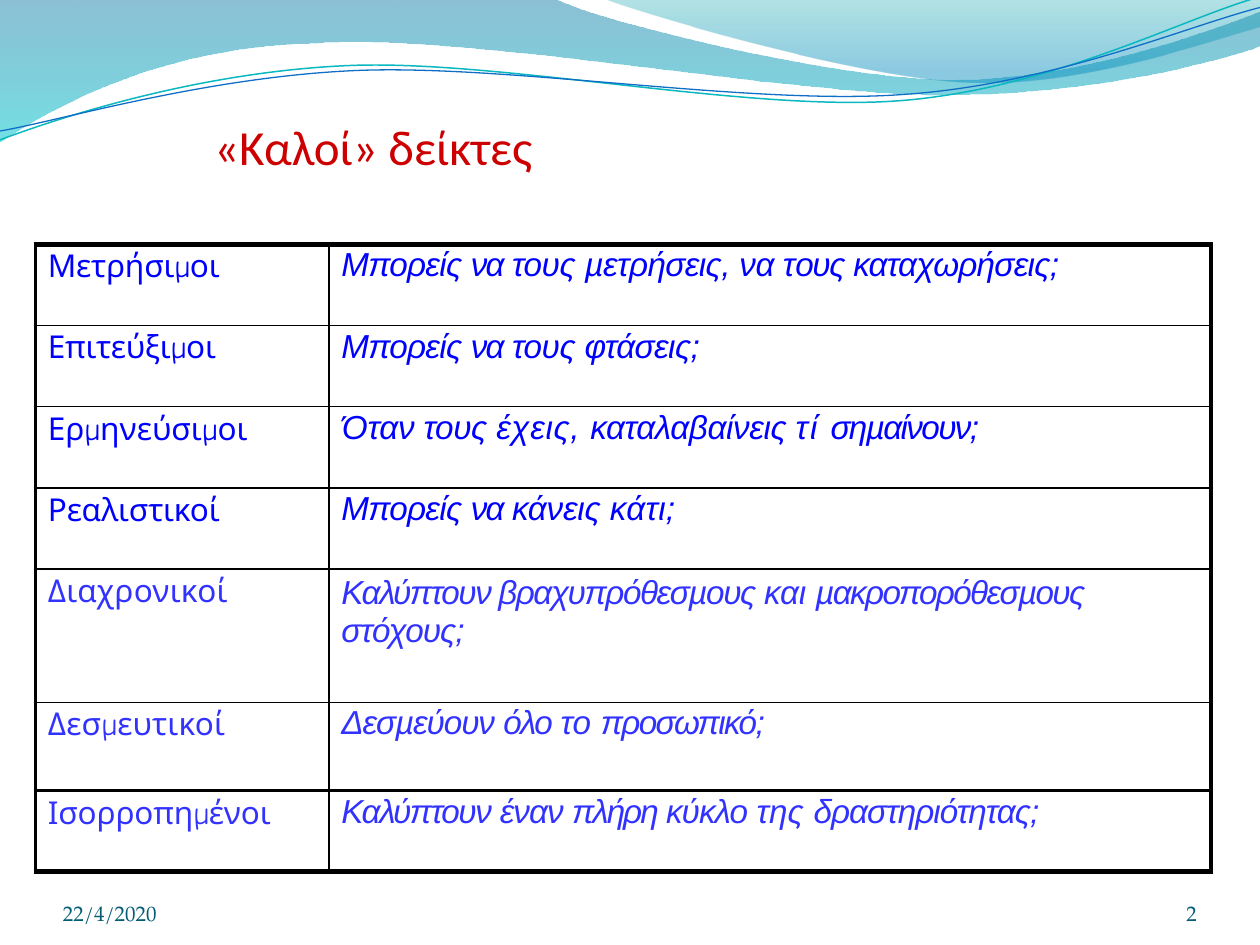
from math import cos, radians, sin

from lxml.etree import SubElement
from pptx import Presentation
from pptx.dml.color import RGBColor
from pptx.enum.text import MSO_ANCHOR as Anchor, MSO_AUTO_SIZE as AutoSize, PP_ALIGN as Align
from pptx.oxml.ns import qn
from pptx.util import Inches, Pt

BLACK = RGBColor(0x00, 0x00, 0x00)
RED = RGBColor(0xCC, 0x00, 0x00)
BLUE = RGBColor(0x00, 0x00, 0xFF)
SOFT_BLUE = RGBColor(0x32, 0x32, 0xFF)
FOOTER_TEAL = RGBColor(0x04, 0x5D, 0x75)
DEEP_BLUE = RGBColor(0x00, 0x74, 0xA1)
CYAN = RGBColor(0x00, 0xC6, 0xCF)
TEAL = RGBColor(0x00, 0xA1, 0xA9)
SKY = RGBColor(0x00, 0x8B, 0xBF)
LINE_TEAL = RGBColor(0x0A, 0xB8, 0xBF)
LINE_BLUE = RGBColor(0x0F, 0x6F, 0xC6)

LABEL_FONT, TEXT_FONT = "Comic Neue", "Arial"
COL_WIDTHS = [2.33, 7]
ROW = 3.22 / 5
ROW_HEIGHTS = [ROW, ROW, ROW, ROW, 1.06, 0.7, ROW]
COL_EDGES = [2.25, 1, 2.25]
ROW_EDGES = [3, 1, 1, 1, 1, 1, 1.5, 3]
STRAND_TILT = 2.7

INDICATORS = [
    (BLUE, ("Μετρήσιµοι", -0.1),
     [("Μπορείς ", -0.4), ("να ", -1), ("τους ", -0.2), ("µετρήσεις, ", -0.3),
      ("να τ", -0.2), ("ους ", -0.8), ("καταχωρήσεις;", -0.4)]),
    (BLUE, ("Επιτεύξιµοι", -0.1),
     [("Μπορείς ", -0.4), ("να ", -1), ("τους ", -0.2), ("φτάσεις;", -0.3)]),
    (BLUE, ("Ερµηνεύσιµοι", 0),
     [("Όταν ", -0.1), ("τους ", -0.2), ("έχεις, ", 0.4), ("καταλαβαίνεις ", -0.2),
      ("τί ", 1.1), ("σηµαίνουν;", -0.9)]),
    (BLUE, ("Ρεαλιστικοί", -0.1),
     [("Μπορείς ", -0.4), ("να ", -1), ("κάνεις ", -0.1), ("κάτι;", 0.2)]),
    (SOFT_BLUE, ("Διαχρονικοί", 0.1),
     [("Καλύπτουν βραχυπρόθεσµους ", -0.8), ("και ", -0.1),
      ("µακροπορόθεσµους ", -0.9), ("στόχους;", -0.5)]),
    (SOFT_BLUE, ("Δεσµευτικοί", 0.1),
     [("Δεσµεύουν ", -0.6), ("όλο ", -0.9), ("το ", 0.1), ("προσωπικό;", -0.9)]),
    (SOFT_BLUE, ("Ισορροπηµένοι", -0.1),
     [("Καλύπτουν ", -0.8), ("έναν ", -0.5), ("πλήρη ", -1.1), ("κύκλο ", -0.5),
      ("της ", 0.1), ("δραστηριότητας;", -0.5)]),
]

BROAD_WAVE = [
    [(0, 0)], [(4.4, -0.01)],
    [(4.76, 0.17), (6.64, 0.63), (7.58, 0.63)],
    [(8.53, 0.63), (9.58, 0.26), (10, 0.09)],
    [(10.01, 0.36)],
    [(9.83, 0.44), (8.7, 0.76), (7.46, 0.75)],
    [(6.22, 0.75), (3.82, 0.28), (2.57, 0.34)],
    [(1.29, 0.36), (0.46, 0.83), (-0.01, 1.13)],
    [(0, 0)],
]
RIGHT_WAVE = [
    [(4.79, -0.01)],
    [(5.09, 0.11), (6.82, 0.62), (7.69, 0.65)],
    [(8.56, 0.69), (9.61, 0.32), (10, 0.21)],
    [(10, 0)], [(4.79, -0.01)],
]
TEAL_STRAND = [
    [(0, 1.11)],
    [(0.48, 0.93), (1.58, 0.57), (2.77, 0.52)],
    [(3.95, 0.47), (5.93, 0.89), (7.13, 0.8)],
    [(8.33, 0.71), (9.38, 0.15), (9.98, -0.02)],
]
BLUE_STRAND = [
    [(0, 1.04)],
    [(0.47, 0.96), (1.64, 0.61), (2.83, 0.56)],
    [(4.03, 0.51), (5.97, 0.84), (7.17, 0.75)],
    [(8.36, 0.67), (9.41, 0.21), (10, 0.06)],
]


def add_outline(slide, segments, close):
    start, *points = [(Inches(x), Inches(y)) for segment in segments for x, y in segment]
    builder = slide.shapes.build_freeform(*start)
    builder.add_line_segments(points, close)
    s = builder.convert_to_shape()
    s.shadow.inherit = False
    lines = iter(list(s._element.iter(qn("a:lnTo"))))
    for segment in segments[1:]:
        first, *others = [next(lines) for _ in segment]
        if others:
            first.tag = qn("a:cubicBezTo")
            for line in others:
                first.append(line[0])
                line.getparent().remove(line)
    return s


def add_wave(slide, segments, stops):
    s = add_outline(slide, segments, True)
    s.fill.gradient()
    s.fill.gradient_angle = 270
    for stop, (position, color, _) in zip(s.fill.gradient_stops, stops):
        stop.position = position
        stop.color.rgb = color
    for clr, (_, _, alpha) in zip(s._element.spPr.iter(qn("a:srgbClr")), stops):
        SubElement(clr, qn("a:alpha")).set("val", str(alpha * 1000))
    s.line.fill.background()


def turn(point, center, degrees):
    dx, dy = point[0] - center[0], point[1] - center[1]
    c, s = cos(radians(degrees)), sin(radians(degrees))
    return center[0] + dx * c - dy * s, center[1] + dx * s + dy * c


def add_strand(slide, segments, center, color, width):
    level = [[turn(point, center, STRAND_TILT) for point in segment] for segment in segments]
    s = add_outline(slide, level, False)
    s.rotation = 360 - STRAND_TILT
    s.fill.background()
    s.line.color.rgb = color
    s.line.width = Pt(width)
    return s


def add_run(p, text, size, font, color, spacing=0, italic=False):
    r = p.add_run()
    r.text = text
    r.font.size = Pt(size)
    r.font.name = font
    r.font.color.rgb = color
    r.font.italic = italic
    r._r.get_or_add_rPr().set("spc", str(round(spacing * 100)))


def set_frame(tf, anchor, top=0):
    tf.word_wrap = True
    tf.vertical_anchor = anchor
    tf.margin_left = tf.margin_right = tf.margin_bottom = 0
    tf.margin_top = Inches(top)


def add_header_waves(slide):
    add_wave(slide, BROAD_WAVE, [(0, DEEP_BLUE, 45), (1, CYAN, 55)])
    add_wave(slide, RIGHT_WAVE, [(0, TEAL, 30), (0.8, SKY, 45)])
    slide.shapes.add_group_shape([
        add_strand(slide, TEAL_STRAND, (4.99, 0.58), LINE_TEAL, 0.85),
        add_strand(slide, BLUE_STRAND, (5, 0.59), LINE_BLUE, 0.75),
    ])


def place_title(slide, text, left, top, width, height):
    s = slide.shapes.title
    s.left, s.top, s.width, s.height = (Inches(v) for v in (left, top, width, height))
    set_frame(s.text_frame, Anchor.BOTTOM, 0.01)
    s.text_frame.auto_size = AutoSize.SHAPE_TO_FIT_TEXT
    p = s.text_frame.paragraphs[0]
    p.alignment = Align.LEFT
    p.space_before = Pt(0.9)
    p._p.get_or_add_pPr().set("marL", str(Inches(0.01)))
    add_run(p, text, 28, "Calibri", RED, -0.1)


def set_borders(cell, row, col):
    widths = {"a:lnL": COL_EDGES[col], "a:lnR": COL_EDGES[col + 1],
              "a:lnT": ROW_EDGES[row], "a:lnB": ROW_EDGES[row + 1]}
    for tag, width in widths.items():
        ln = SubElement(cell._tc.get_or_add_tcPr(), qn(tag), w=str(Pt(width)))
        fill = SubElement(ln, qn("a:solidFill"))
        SubElement(fill, qn("a:srgbClr"), val=str(BLACK))


def prepare_cell(cell, row, col, top, before):
    set_borders(cell, row, col)
    cell.fill.background()
    cell.margin_left = cell.margin_right = cell.margin_bottom = 0
    cell.margin_top = Inches(top)
    p = cell.text_frame.paragraphs[0]
    p.space_before = Pt(before)
    p._p.get_or_add_pPr().set("marL", str(Inches(0.1)))
    return p


def add_indicator_table(slide, left, top):
    box = (left, top, sum(COL_WIDTHS), sum(ROW_HEIGHTS))
    table = slide.shapes.add_table(len(ROW_HEIGHTS), len(COL_WIDTHS),
                                   *(Inches(v) for v in box)).table
    table.first_row = table.horz_banding = False
    for column, width in zip(table.columns, COL_WIDTHS):
        column.width = Inches(width)
    for row, (color, (label, spacing), runs) in enumerate(INDICATORS):
        table.rows[row].height = Inches(ROW_HEIGHTS[row])
        p = prepare_cell(table.cell(row, 0), row, 0, 0.04, 2.5)
        add_run(p, label, 18, LABEL_FONT, color, spacing)
        two_lines = ROW_HEIGHTS[row] > 1
        top_gap, before = (0.04, 3.2) if two_lines else (0.02, 1.6)
        p = prepare_cell(table.cell(row, 1), row, 1, top_gap, before)
        if two_lines:
            p.line_spacing = Pt(21.6)
        for text, run_spacing in runs:
            add_run(p, text, 19, TEXT_FONT, color, run_spacing, True)


def add_footer_text(slide, text, left, width, align):
    s = slide.shapes.add_textbox(Inches(left), Inches(6.95), Inches(width), Inches(0.4))
    set_frame(s.text_frame, Anchor.BOTTOM)
    p = s.text_frame.paragraphs[0]
    p.alignment = align
    add_run(p, text, 12, "TeX Gyre Pagella", FOOTER_TEAL)


def main():
    prs = Presentation()
    prs.slide_width, prs.slide_height = Inches(10), Inches(7.5)
    slide = prs.slides.add_slide(prs.slide_layouts[5])
    add_header_waves(slide)
    place_title(slide, "«Καλοί» δείκτες", 1.69, 0.9, 3.03, 0.49)
    add_indicator_table(slide, 0.28, 1.94)
    add_footer_text(slide, "22/4/2020", 0.5, 2.33, Align.LEFT)
    add_footer_text(slide, "2", 8.67, 0.83, Align.RIGHT)
    prs.save("out.pptx")


if __name__ == "__main__":
    main()
